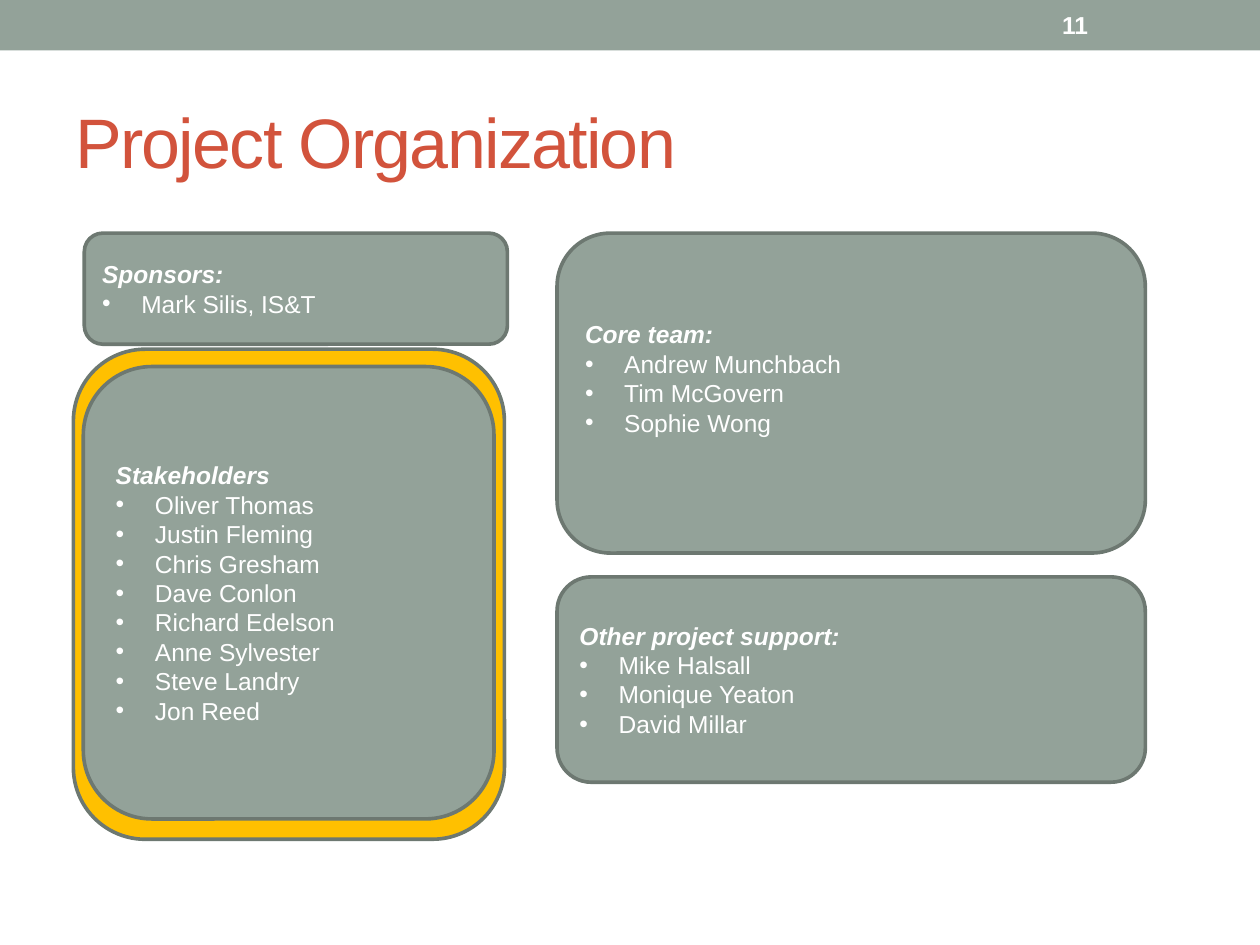
from dataclasses import dataclass

from lxml import etree
from pptx import Presentation
from pptx.dml.color import RGBColor as RGB
from pptx.enum.shapes import MSO_SHAPE as Shape
from pptx.enum.text import MSO_ANCHOR as Anchor, PP_ALIGN as Align
from pptx.oxml.ns import qn
from pptx.util import Cm, Pt


@dataclass(frozen=True)
class Theme:
    font: str = "Arial"
    sage: RGB = RGB(0x93, 0xA2, 0x99)
    edge: RGB = RGB(0x6D, 0x78, 0x71)
    gold: RGB = RGB(0xFF, 0xC0, 0x00)
    red: RGB = RGB(0xD2, 0x53, 0x3C)
    white: RGB = RGB(0xFF, 0xFF, 0xFF)
    head: Pt = Pt(40)
    body: Pt = Pt(14)
    rule: Pt = Pt(2.08)


theme = Theme()


def add_box(kind, place, fill, edge=None):
    box = slide.shapes.add_shape(kind, *map(Cm, place))
    box.shadow.inherit = False
    box.fill.solid()
    box.fill.fore_color.rgb = fill
    if edge is None:
        box.line.fill.background()
    else:
        box.line.color.rgb = edge
        box.line.width = theme.rule
    return box


def add_label(place, text, size, color, bold=False):
    frame = slide.shapes.add_textbox(*map(Cm, place)).text_frame
    frame.word_wrap = True
    frame.vertical_anchor = Anchor.MIDDLE
    frame.text = text
    font = frame.paragraphs[0].runs[0].font
    font.name, font.size, font.bold = theme.font, size, bold
    font.color.rgb = color
    return font


deck = Presentation()
deck.slide_width, deck.slide_height = Cm(25.4), Cm(19.05)
slide = deck.slides.add_slide(deck.slide_layouts[6])

add_box(Shape.RECTANGLE, (0, 0, 25.4, 1.02), theme.sage)
add_box(Shape.ROUNDED_RECTANGLE, (1.48, 7.04, 8.69, 9.88), theme.gold, theme.edge)

title = add_label((1.27, 1.47, 22.86, 2.74), "Project Organization", theme.head, theme.red)
title._element.set("spc", "-100")
add_label((21.16, 0.05, 2.97, 0.91), "11", theme.body, theme.white, bold=True)

# Place, bottom inset, heading, names
left, wide = 11.23, 11.86
groups = [
    ((1.7, 4.7, 8.53, 2.24), 0.13, "Sponsors:", ["Mark Silis, IS&T"]),
    ((left, 4.7, wide, 6.45), 0.72, "Core team:",
     ["Andrew Munchbach", "Tim McGovern", "Sophie Wong"]),
    ((left, 11.63, wide, 4.14), 0.13, "Other project support:",
     ["Mike Halsall", "Monique Yeaton", "David Millar"]),
    ((1.68, 7.39, 8.28, 9.12), 0.13, "Stakeholders",
     ["Oliver Thomas", "Justin Fleming", "Chris Gresham", "Dave Conlon",
      "Richard Edelson", "Anne Sylvester", "Steve Landry", "Jon Reed"]),
]

for place, inset, heading, names in groups:
    box = add_box(Shape.ROUNDED_RECTANGLE, place, theme.sage, theme.edge)
    frame = box.text_frame
    frame.word_wrap = True
    frame.vertical_anchor = Anchor.MIDDLE
    frame.margin_bottom = Cm(inset)
    frame.text = "\n".join([heading, *names])
    for row, para in enumerate(frame.paragraphs):
        para.alignment = Align.LEFT
        if row > 0:
            props = para._p.get_or_add_pPr()
            props.set("marL", str(Cm(0.79)))
            props.set("indent", str(Cm(-0.79)))
            etree.SubElement(props, qn("a:buFont"), typeface=theme.font)
            etree.SubElement(props, qn("a:buChar"), char="•")
        font = para.runs[0].font
        font.name, font.size = theme.font, theme.body
        font.bold = font.italic = row == 0
        font.color.rgb = theme.white

deck.save("out.pptx")
